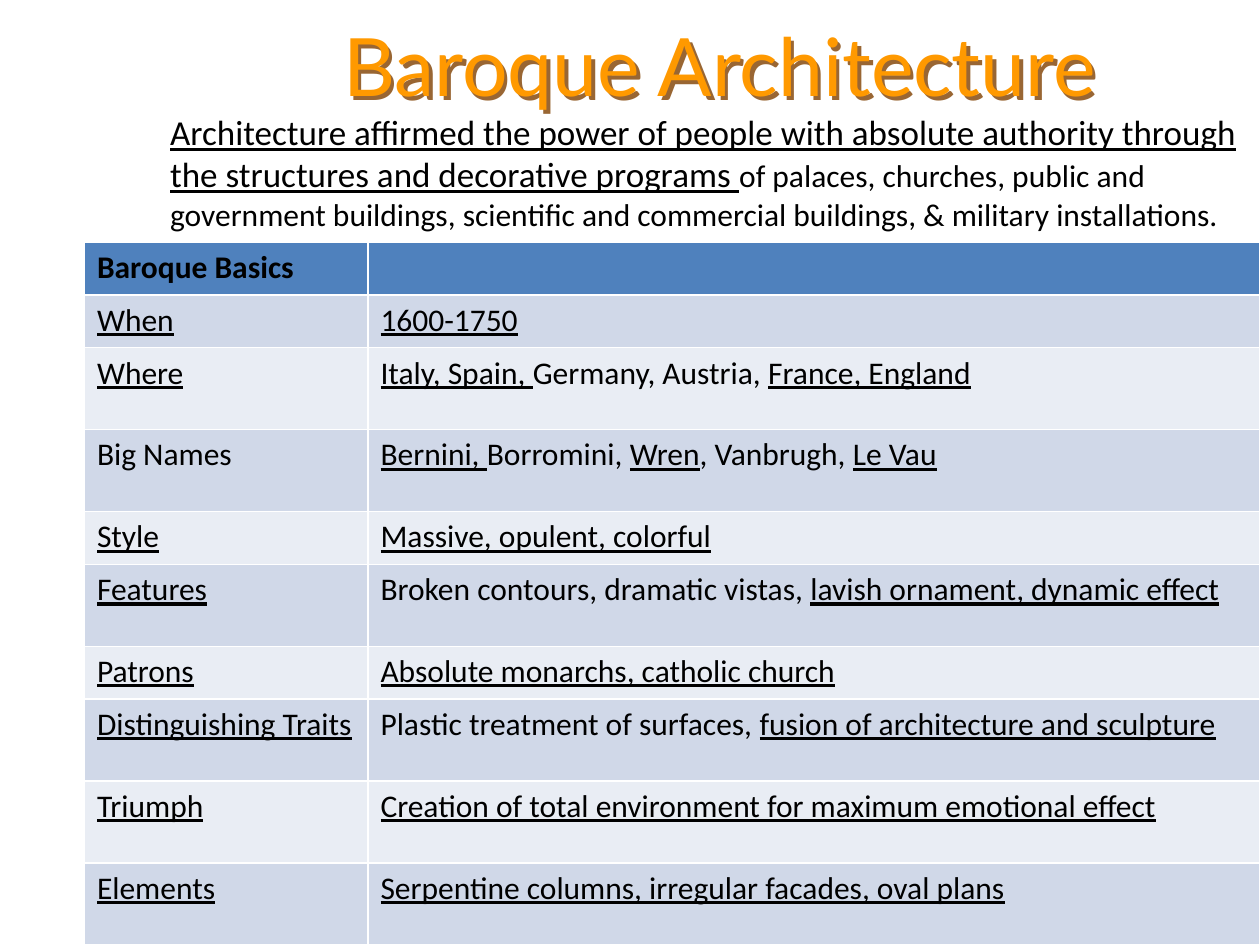
from dataclasses import dataclass

from lxml import etree
from pptx import Presentation
from pptx.dml.color import RGBColor as RGB
from pptx.enum.text import MSO_ANCHOR as Anchor, MSO_AUTO_SIZE as AutoSize, PP_ALIGN as Align
from pptx.oxml import parse_xml
from pptx.oxml.ns import nsdecls, qn
from pptx.util import Inches, Pt


@dataclass(frozen=True)
class Theme:
    heading_font: str = "Lato"
    text_font: str = "Calibri"
    heading_size: float = 46
    lead_size: float = 20
    text_size: float = 18
    heading: str = "FF9900"
    shadow: str = "996633"
    text: str = "000000"
    header_fill: str = "4F81BD"
    band_fills: tuple = ("E9EDF4", "D0D8E8")


theme = Theme()


def add_run(paragraph, words, size, underline=False, bold=False,
            font=theme.text_font, color=theme.text):
    run = paragraph.add_run()
    run.text = words
    run.font.name = font
    run.font.size = Pt(size)
    run.font.bold = bold
    run.font.underline = underline
    run.font.color.rgb = RGB.from_string(color)


def place(holder, left, top, width, height):
    holder.left, holder.top = Inches(left), Inches(top)
    holder.width, holder.height = Inches(width), Inches(height)
    frame = holder.text_frame
    frame.word_wrap = True
    frame.auto_size = AutoSize.NONE
    frame.vertical_anchor = Anchor.TOP
    return frame.paragraphs[0]


prs = Presentation()
prs.slide_width, prs.slide_height = Inches(10), Inches(7.5)
slide = prs.slides.add_slide(prs.slide_layouts[1])

title = slide.shapes.title
heading = place(title, 1.67, 0.08, 8.08, 0.75)
heading.alignment = Align.CENTER
add_run(heading, "Baroque Architecture", theme.heading_size,
        font=theme.heading_font, color=theme.heading)
title._element.spPr.append(parse_xml(
    f'<a:effectLst {nsdecls("a")}>'
    f'<a:outerShdw dist="{Inches(0.04)}" dir="2700000" algn="ctr" rotWithShape="0">'
    f'<a:srgbClr val="{theme.shadow}"/></a:outerShdw></a:effectLst>'))

summary = place(slide.placeholders[1], 1.25, 0.83, 8.75, 1.38)
summary_format = summary._p.get_or_add_pPr()
summary_format.set("marL", "0")
summary_format.set("indent", "0")
etree.SubElement(summary_format, qn("a:buNone"))
summary.space_before = Pt(0)
add_run(summary, "Architecture affirmed the power of people with absolute authority "
        "through the structures and decorative programs ", theme.lead_size, underline=True)
add_run(summary, "of palaces, churches, public and government buildings, scientific and "
        "commercial buildings, & military installations.", theme.text_size)

# Underscores enclose underlined words.
short, tall = 0.42, 0.65
basics = [
    ("Baroque Basics", "", short),
    ("_When_", "_1600-1750_", short),
    ("_Where_", "_Italy, Spain, _Germany, Austria, _France, England_", tall),
    ("Big Names", "_Bernini, _Borromini, _Wren_, Vanbrugh, _Le Vau_", tall),
    ("_Style_", "_Massive, opulent, colorful_", short),
    ("_Features_", "Broken contours, dramatic vistas, _lavish ornament, dynamic effect_", tall),
    ("_Patrons_", "_Absolute monarchs, catholic church_", short),
    ("_Distinguishing Traits_",
     "Plastic treatment of surfaces, _fusion of architecture and sculpture_", tall),
    ("_Triumph_", "_Creation of total environment for maximum emotional effect_", tall),
    ("_Elements_", "_Serpentine columns, irregular facades, oval plans_", tall),
]
basics_table = slide.shapes.add_table(len(basics), 2, Inches(0.67), Inches(1.92),
                                      Inches(9.33), Inches(5.58)).table
for column, width in zip(basics_table.columns, (2.25, 7.08)):
    column.width = Inches(width)

for index, (topic, details, height) in enumerate(basics):
    basics_table.rows[index].height = Inches(height)
    fill = theme.band_fills[index % 2] if index else theme.header_fill
    for cell, marked in zip(basics_table.rows[index].cells, (topic, details)):
        cell.fill.solid()
        cell.fill.fore_color.rgb = RGB.from_string(fill)
        for part, words in enumerate(marked.split("_")):
            if words:
                add_run(cell.text_frame.paragraphs[0], words, theme.text_size,
                        underline=part % 2 == 1, bold=index == 0)

prs.save("out.pptx")
